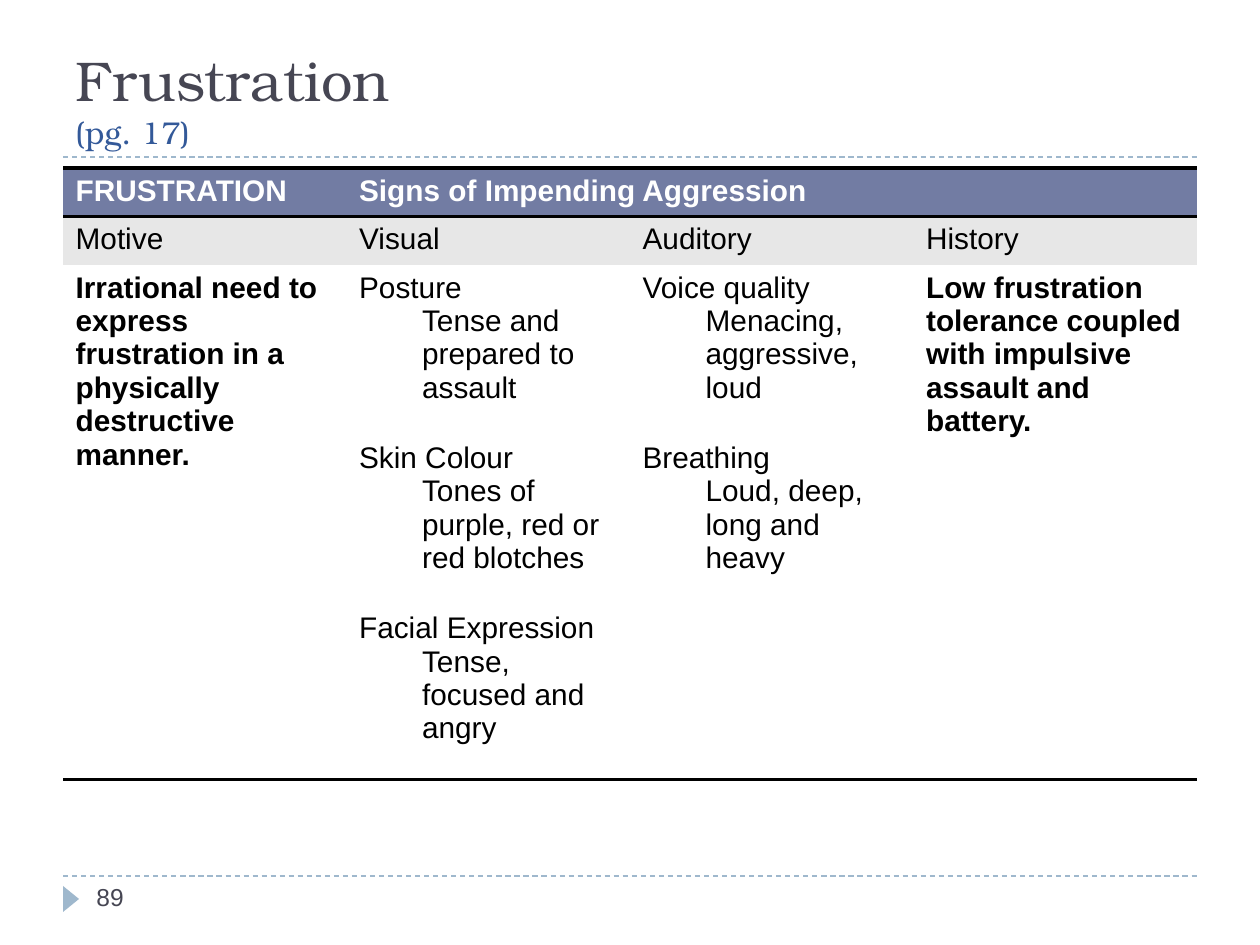
from dataclasses import dataclass

from lxml.etree import SubElement
from pptx import Presentation
from pptx.dml.color import RGBColor
from pptx.enum.dml import MSO_LINE
from pptx.enum.shapes import MSO_CONNECTOR, MSO_SHAPE
from pptx.enum.text import MSO_ANCHOR
from pptx.oxml import parse_xml
from pptx.oxml.ns import nsdecls, qn
from pptx.util import Emu, Pt


@dataclass(frozen=True)
class Theme:
    heading_font: str = "TeX Gyre Bonum"
    body_font: str = "Arial"
    title_size: int = 32
    subtitle_size: int = 18
    table_size: int = 17
    number_size: int = 14
    gap: int = 21
    dark: str = "464653"
    blue: str = "335999"
    accent: str = "9FB8CD"
    header: str = "727CA3"
    band: str = "E7E7E7"
    white: str = "FFFFFF"
    black: str = "000000"


THEME = Theme()
NO_STYLE = "{2D5ABB26-0587-4C30-8999-92F81FD0307C}"
LEFT, WIDTH = 63, 1134
ROW_HEIGHTS = [48, 48, 510]
COLUMNS = 4

HEADINGS = ["FRUSTRATION", "Signs of Impending Aggression"]
SUBHEADINGS = ["Motive", "Visual", "Auditory", "History"]
MOTIVE = "Irrational need to express frustration in a physically destructive manner."
HISTORY = "Low frustration tolerance coupled with impulsive assault and battery."
VISUAL = [
    ("Posture", "Tense and prepared to assault"),
    ("Skin Colour", "Tones of purple, red or red blotches"),
    ("Facial Expression", "Tense, focused and angry"),
]
AUDITORY = [
    ("Voice quality", "Menacing, aggressive, loud"),
    ("Breathing", "Loud, deep, long and heavy"),
]


def px(n):
    return Emu(round(n * 914400 / 126))


def rgb(value):
    return RGBColor.from_string(value)


def style_font(font, size, color, name=THEME.body_font, bold=False):
    font.name, font.size, font.bold = name, Pt(size), bold
    font.color.rgb = rgb(color)


def add_rule(slide, y):
    line = slide.shapes.add_connector(
        MSO_CONNECTOR.STRAIGHT, px(LEFT), px(y), px(LEFT + WIDTH), px(y))
    line.line.color.rgb = rgb(THEME.accent)
    line.line.width = Pt(0.75)
    line.line.dash_style = MSO_LINE.DASH
    SubElement(line._element.spPr, qn("a:effectLst"))


def add_marker(slide):
    sp = slide.shapes.add_shape(
        MSO_SHAPE.ISOSCELES_TRIANGLE, px(58), px(891), px(26), px(16))
    sp.rotation = 90
    sp.shadow.inherit = False
    sp.fill.solid()
    sp.fill.fore_color.rgb = rgb(THEME.accent)
    sp.line.fill.background()


def add_text_box(slide, x, y, w, h, anchor):
    tf = slide.shapes.add_textbox(px(x), px(y), px(w), px(h)).text_frame
    tf.word_wrap = True
    tf.vertical_anchor = anchor
    return tf.paragraphs[0]


def add_title(slide):
    p = add_text_box(slide, LEFT, 21, WIDTH, 136, MSO_ANCHOR.BOTTOM)
    r = p.add_run()
    r.text = "Frustration"
    style_font(r.font, THEME.title_size, THEME.dark, THEME.heading_font)
    p.add_line_break()
    r = p.add_run()
    r.text = "(pg. 17)"
    style_font(r.font, THEME.subtitle_size, THEME.blue, THEME.heading_font)


def add_page_number(slide):
    p = add_text_box(slide, 84, 876, 273, 50, MSO_ANCHOR.TOP)
    p.text = "89"
    style_font(p.font, THEME.number_size, THEME.dark)


def fill_cell(cell, color):
    cell.fill.solid()
    cell.fill.fore_color.rgb = rgb(color)


def add_border(cell, side):
    """Draw a black 2 pt border; side is T or B, and T must be added after B."""
    cell._tc.get_or_add_tcPr().insert(0, parse_xml(
        f'<a:ln{side} {nsdecls("a")} w="{Pt(2)}"><a:solidFill>'
        f'<a:srgbClr val="{THEME.black}"/></a:solidFill></a:ln{side}>'))


def write_cell(cell, text, color=THEME.black, bold=False):
    p = cell.text_frame.paragraphs[0]
    p.text = text
    style_font(p.font, THEME.table_size, color, bold=bold)


def write_signs(cell, signs):
    """Write each sign with its description indented below it."""
    tf = cell.text_frame
    for i, (sign, description) in enumerate(signs):
        p = tf.add_paragraph() if i else tf.paragraphs[0]
        p.text = sign
        p.space_before = Pt(THEME.gap if i else 0)
        detail = tf.add_paragraph()
        detail.text = description
        detail.level = 1
        detail._p.get_or_add_pPr().set("marL", str(px(63)))
        for para in (p, detail):
            style_font(para.font, THEME.table_size, THEME.black)


def add_signs_table(slide):
    table = slide.shapes.add_table(
        len(ROW_HEIGHTS), COLUMNS, px(LEFT), px(168), px(WIDTH),
        px(sum(ROW_HEIGHTS))).table
    table._tbl.tblPr.find(qn("a:tableStyleId")).text = NO_STYLE
    table.first_row = table.horz_banding = False
    for row, height in zip(table.rows, ROW_HEIGHTS):
        row.height = px(height)

    table.cell(0, 1).merge(table.cell(0, COLUMNS - 1))
    for row, color in zip(table.rows, (THEME.header, THEME.band, THEME.white)):
        for cell in row.cells:
            fill_cell(cell, color)
    for col in range(COLUMNS):
        add_border(table.cell(0, col), "B")
        add_border(table.cell(0, col), "T")
        add_border(table.cell(2, col), "B")

    for col, text in enumerate(HEADINGS):
        write_cell(table.cell(0, col), text, THEME.white, bold=True)
    for col, text in enumerate(SUBHEADINGS):
        write_cell(table.cell(1, col), text)
    write_cell(table.cell(2, 0), MOTIVE, bold=True)
    write_signs(table.cell(2, 1), VISUAL)
    write_signs(table.cell(2, 2), AUDITORY)
    write_cell(table.cell(2, 3), HISTORY, bold=True)


def main():
    prs = Presentation()
    prs.slide_width, prs.slide_height = px(1260), px(945)
    slide = prs.slides.add_slide(prs.slide_layouts[6])
    for y in (876, 157):
        add_rule(slide, y)
    add_marker(slide)
    add_title(slide)
    add_page_number(slide)
    add_signs_table(slide)
    prs.save("out.pptx")


if __name__ == "__main__":
    main()
